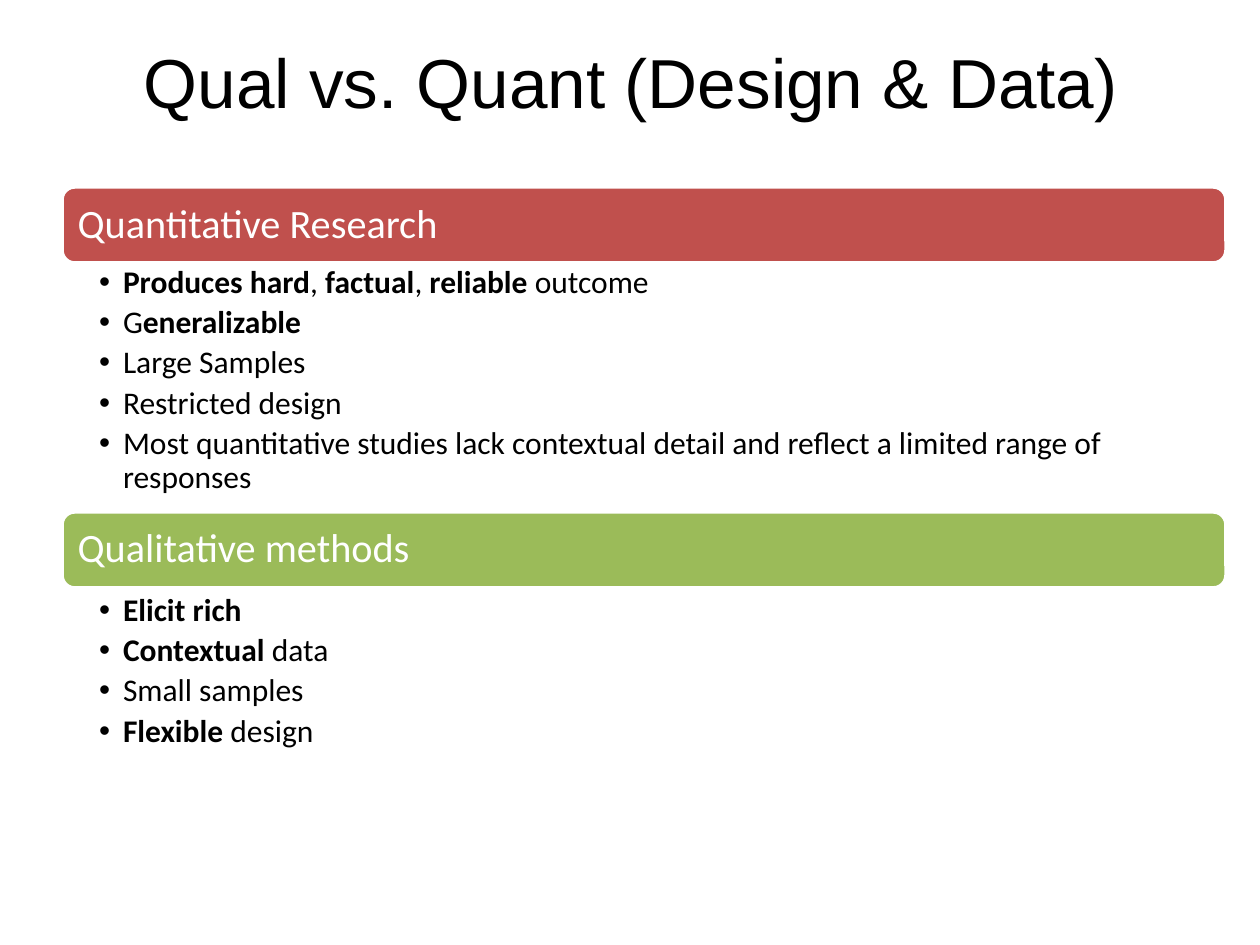
from lxml import etree
from pptx import Presentation
from pptx.dml.color import RGBColor
from pptx.enum.shapes import MSO_SHAPE
from pptx.enum.text import MSO_ANCHOR, MSO_AUTO_SIZE, PP_ALIGN
from pptx.oxml.ns import qn
from pptx.util import Emu, Pt

ROUNDED = MSO_SHAPE.ROUNDED_RECTANGLE
MIDDLE, TOP = MSO_ANCHOR.MIDDLE, MSO_ANCHOR.TOP
CENTER, LEFT = PP_ALIGN.CENTER, PP_ALIGN.LEFT
NO_FIT = MSO_AUTO_SIZE.NONE
TITLE_ONLY = 5

EMU_PER_PX = 914400 / 126
COLORS = {"black": "000000", "white": "FFFFFF", "red": "C0504D", "green": "9BBB59"}
BAND_LEFT, BAND_WIDTH, BAND_HEIGHT = 62, 1164, 76
BULLET_INDENT = 24

SECTIONS = [
    {
        "heading": "Quantitative Research", "color": "red",
        "band_top": 187, "list_top": 262, "list_height": 249,
        "bullets": [
            [("Produces hard", True), (", ", False), ("factual", True), (", ", False),
             ("reliable ", True), ("outcome", False)],
            [("G", False), ("eneralizable", True)],
            [("Large Samples", False)],
            [("Restricted design", False)],
            [("Most quantitative studies lack contextual detail and reflect "
              "a limited range of responses", False)],
        ],
    },
    {
        "heading": "Qualitative methods", "color": "green",
        "band_top": 512, "list_top": 590, "list_height": 170,
        "bullets": [
            [("Elicit rich", True)],
            [("Contextual ", True), ("data", False)],
            [("Small samples", False)],
            [("Flexible ", True), ("design", False)],
        ],
    },
]


def px(length):
    """Turn pixels into EMU."""
    return Emu(round(length * EMU_PER_PX))


def rgb(name):
    """Look up a named colour."""
    return RGBColor.from_string(COLORS[name])


def set_frame(frame, anchor, left, top, right, bottom):
    """Set the wrapping, anchor and insets of a text frame."""
    frame.word_wrap = True
    frame.auto_size = NO_FIT
    frame.vertical_anchor = anchor
    frame.margin_left, frame.margin_top = px(left), px(top)
    frame.margin_right, frame.margin_bottom = px(right), px(bottom)


def set_font(para, name, size, color):
    """Set the font of a whole paragraph."""
    para.font.name = name
    para.font.size = Pt(size)
    para.font.color.rgb = rgb(color)


def set_title(page, text):
    """Place and format the title placeholder."""
    title = page.shapes.title
    title.left, title.top, title.width, title.height = px(96), px(73), px(1070), px(15)
    set_frame(title.text_frame, MIDDLE, 6, 6, 6, 6)
    para = title.text_frame.paragraphs[0]
    para.text = text
    para.alignment = CENTER
    set_font(para, "Arial", 39.6, "black")


def add_band(page, text, color, top):
    """Add a rounded heading band."""
    band = page.shapes.add_shape(
        ROUNDED, px(BAND_LEFT), px(top), px(BAND_WIDTH), px(BAND_HEIGHT))
    band.shadow.inherit = False
    band.fill.solid()
    band.fill.fore_color.rgb = rgb(color)
    band.line.color.rgb = rgb("white")
    band.line.width = Pt(2)
    set_frame(band.text_frame, MIDDLE, 12, 12, 12, 12)
    para = band.text_frame.paragraphs[0]
    para.text = text
    para.alignment = LEFT
    para.line_spacing = 0.9
    set_font(para, "Calibri", 23, "white")


def set_bullet(para):
    """Give a paragraph a hanging round bullet."""
    properties = para._p.get_or_add_pPr()
    properties.set("marL", str(px(BULLET_INDENT)))
    properties.set("indent", str(-px(BULLET_INDENT)))
    etree.SubElement(properties, qn("a:buFont"), typeface="Arial")
    etree.SubElement(properties, qn("a:buChar"), char="•")


def add_bullets(page, bullets, top, height):
    """Add a bulleted list with mixed bold and regular runs."""
    box = page.shapes.add_textbox(px(BAND_LEFT), px(top), px(BAND_WIDTH), px(height))
    frame = box.text_frame
    set_frame(frame, TOP, 37, 4, 23, 4)
    for index, spans in enumerate(bullets):
        para = frame.add_paragraph() if index else frame.paragraphs[0]
        set_bullet(para)
        para.line_spacing = 0.9
        para.space_after = Pt(3.6)
        set_font(para, "Calibri", 18, "black")
        for text, bold in spans:
            span = para.add_run()
            span.text = text
            span.font.bold = bold


def main():
    """Build the slide and save the deck."""
    deck = Presentation()
    deck.slide_width, deck.slide_height = px(1260), px(945)
    page = deck.slides.add_slide(deck.slide_layouts[TITLE_ONLY])
    set_title(page, "Qual vs. Quant (Design & Data)")
    for section in SECTIONS:
        add_band(page, section["heading"], section["color"], section["band_top"])
        add_bullets(page, section["bullets"], section["list_top"], section["list_height"])
    deck.save("out.pptx")


if __name__ == "__main__":
    main()
